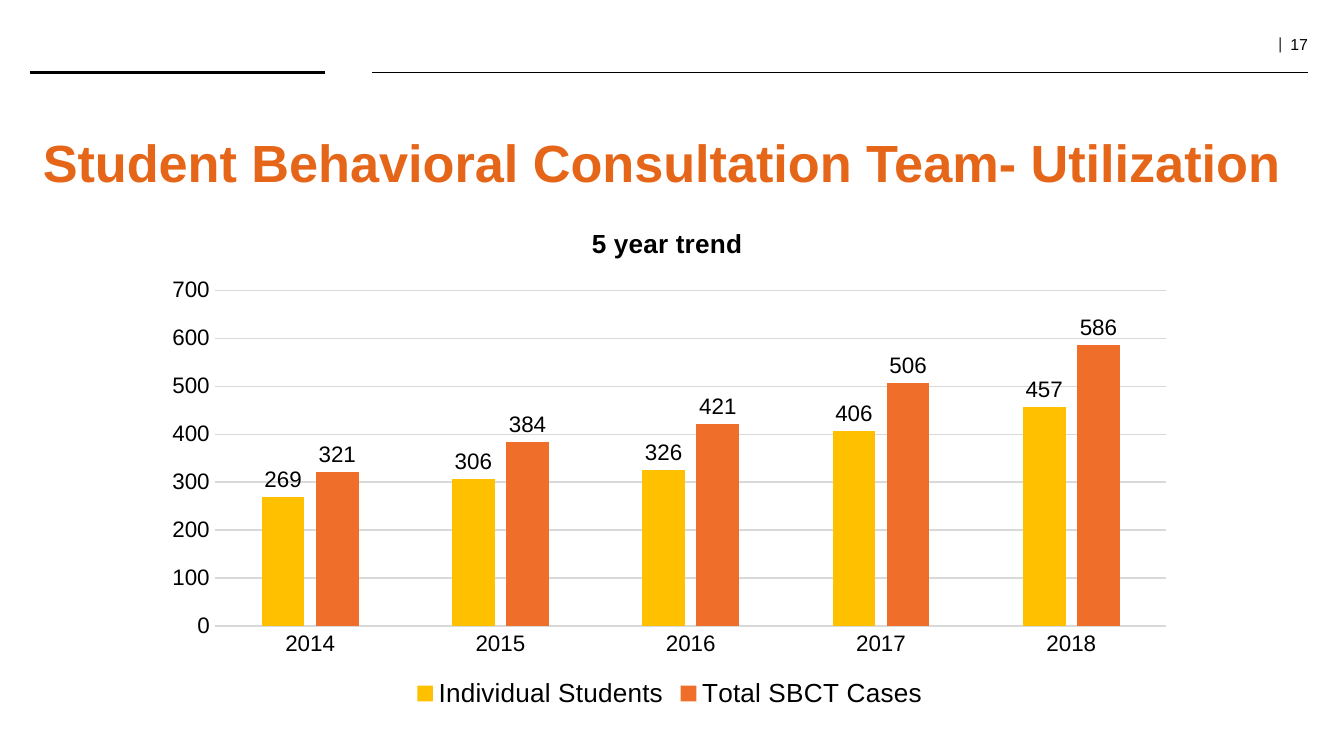
import pptx
import pptx.util
import pptx.chart.data
import pptx.dml.color
import pptx.enum.chart
import pptx.enum.shapes
import pptx.enum.text
import lxml.etree

Inches = pptx.util.Inches
Pt = pptx.util.Pt
enum = pptx.enum


def tint(code):
    return pptx.dml.color.RGBColor.from_string(code)


def style(font, size, code="000000", bold=False, face="Arial"):
    font.name = face
    font.size = Pt(size)
    font.bold = bold
    font.color.rgb = tint(code)


deck = pptx.Presentation()
deck.slide_width = Inches(10)
deck.slide_height = Inches(10 * 9 / 16)
slide = deck.slides.add_slide(deck.slide_layouts[6])

for left, right, width in [(0.22, 2.42, 2), (2.77, 9.73, 1)]:
    rule = slide.shapes.add_connector(
        enum.shapes.MSO_CONNECTOR.STRAIGHT,
        Inches(left), Inches(0.54), Inches(right), Inches(0.54))
    rule.line.color.rgb = tint("000000")
    rule.line.width = Pt(width)
    props = rule.line._get_or_add_ln().getparent()
    lxml.etree.SubElement(props, pptx.oxml.ns.qn("a:effectLst"))

align = enum.text.PP_ALIGN
texts = [
    ((8.81, 0.23, 1.02, 0.22), align.RIGHT, 0.8,
     [("|  ", 9, "000000", False, "Cambria"),
      ("17", 8.5, "000000", False, "Arial")]),
    ((0.22, 0.92, 9.51, 0.57), align.LEFT, 1,
     [("Student Behavioral Consultation Team- Utilization",
       28, "E56618", True, "Arial")]),
]
for place, side, space, runs in texts:
    box = slide.shapes.add_textbox(*map(Inches, place))
    frame = box.text_frame
    frame.word_wrap = True
    para = frame.paragraphs[0]
    para.alignment = side
    para.line_spacing = space
    for words, *look in runs:
        run = para.add_run()
        run.text = words
        style(run.font, *look)

data = pptx.chart.data.CategoryChartData()
data.categories = ["2014", "2015", "2016", "2017", "2018"]
data.add_series("Individual Students", [269, 306, 326, 406, 457])
data.add_series("Total SBCT Cases", [321, 384, 421, 506, 586])
left, top, width, height = 1.13, 1.54, 7.71, 3.77
chart = slide.shapes.add_chart(
    enum.chart.XL_CHART_TYPE.COLUMN_CLUSTERED,
    Inches(left), Inches(top), Inches(width), Inches(height), data).chart
style(chart.font, 10)

chart.has_title = True
run = chart.chart_title.text_frame.paragraphs[0].add_run()
run.text = "5 year trend"
style(run.font, 14, bold=True)

chart.has_legend = True
chart.legend.position = enum.chart.XL_LEGEND_POSITION.BOTTOM
chart.legend.include_in_layout = False
style(chart.legend.font, 14)

for axis in (chart.category_axis, chart.value_axis):
    axis.major_tick_mark = enum.chart.XL_TICK_MARK.NONE
    axis.minor_tick_mark = enum.chart.XL_TICK_MARK.NONE
    style(axis.tick_labels.font, 12)
chart.value_axis.format.line.fill.background()
chart.value_axis.minimum_scale = 0
chart.value_axis.maximum_scale = 700
chart.value_axis.major_unit = 100
for line in (chart.category_axis.format.line,
             chart.value_axis.major_gridlines.format.line):
    line.color.rgb = tint("D9D9D9")
    line.width = Pt(0.75)

plot = chart.plots[0]
plot.gap_width = 219
plot.overlap = -27
plot.vary_by_categories = False
for series, code in zip(plot.series, ["FFC000", "EF6F2A"]):
    series.format.fill.solid()
    series.format.fill.fore_color.rgb = tint(code)
    labels = series.data_labels
    labels.show_value = True
    labels.position = enum.chart.XL_LABEL_POSITION.OUTSIDE_END
    style(labels.font, 12)

qn = pptx.oxml.ns.qn
area = chart._chartSpace.chart.plotArea
head = chart.chart_title._element
edges = [("xMode", "edge"), ("yMode", "edge")]
spots = [
    (area, 0, [("layoutTarget", "inner"), *edges,
               ("x", (1.6 - left) / width), ("y", (2.16 - top) / height),
               ("w", 7.08 / width), ("h", 2.5 / height)]),
    (head, 1, [*edges, ("x", 0.42), ("y", 0.03)]),
]
for part, index, items in spots:
    for old in part.findall(qn("c:layout")):
        part.remove(old)
    layout = lxml.etree.Element(qn("c:layout"))
    part.insert(index, layout)
    manual = lxml.etree.SubElement(layout, qn("c:manualLayout"))
    for tag, value in items:
        lxml.etree.SubElement(manual, qn("c:" + tag), val=str(value))

deck.save("out.pptx")
